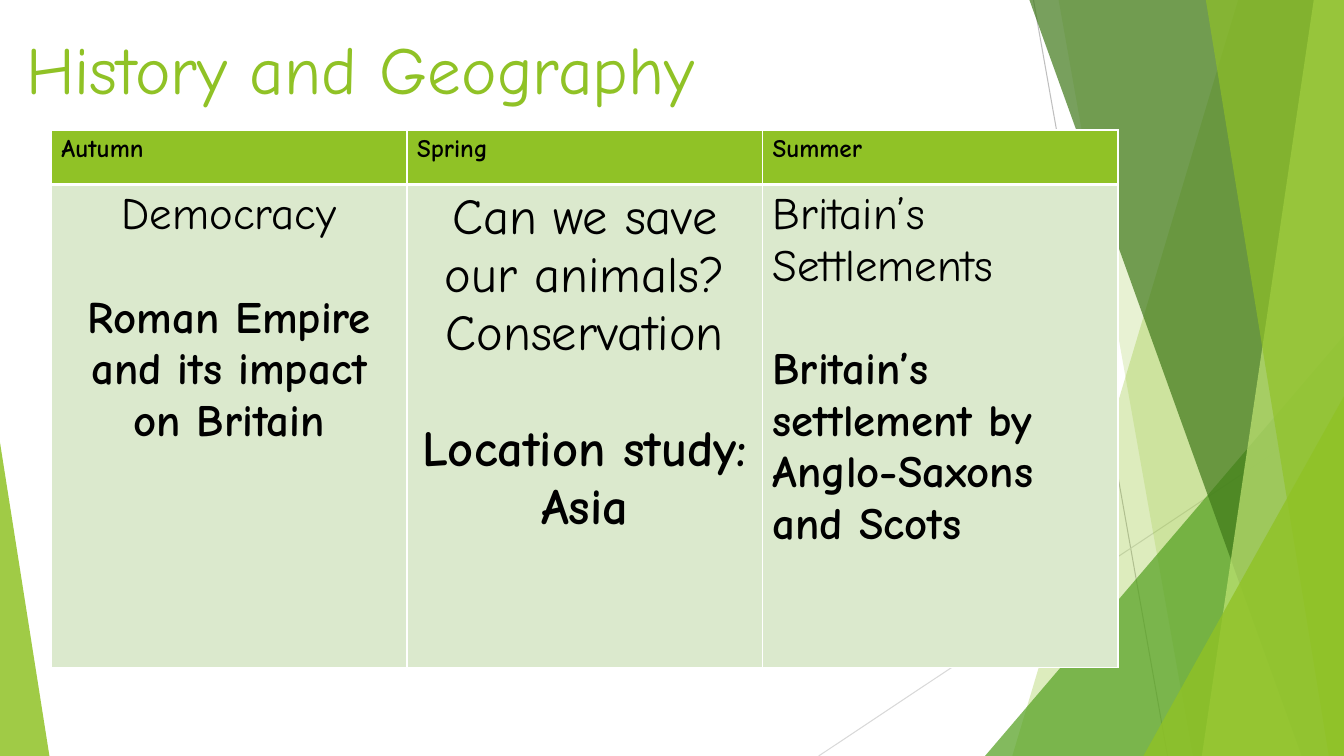
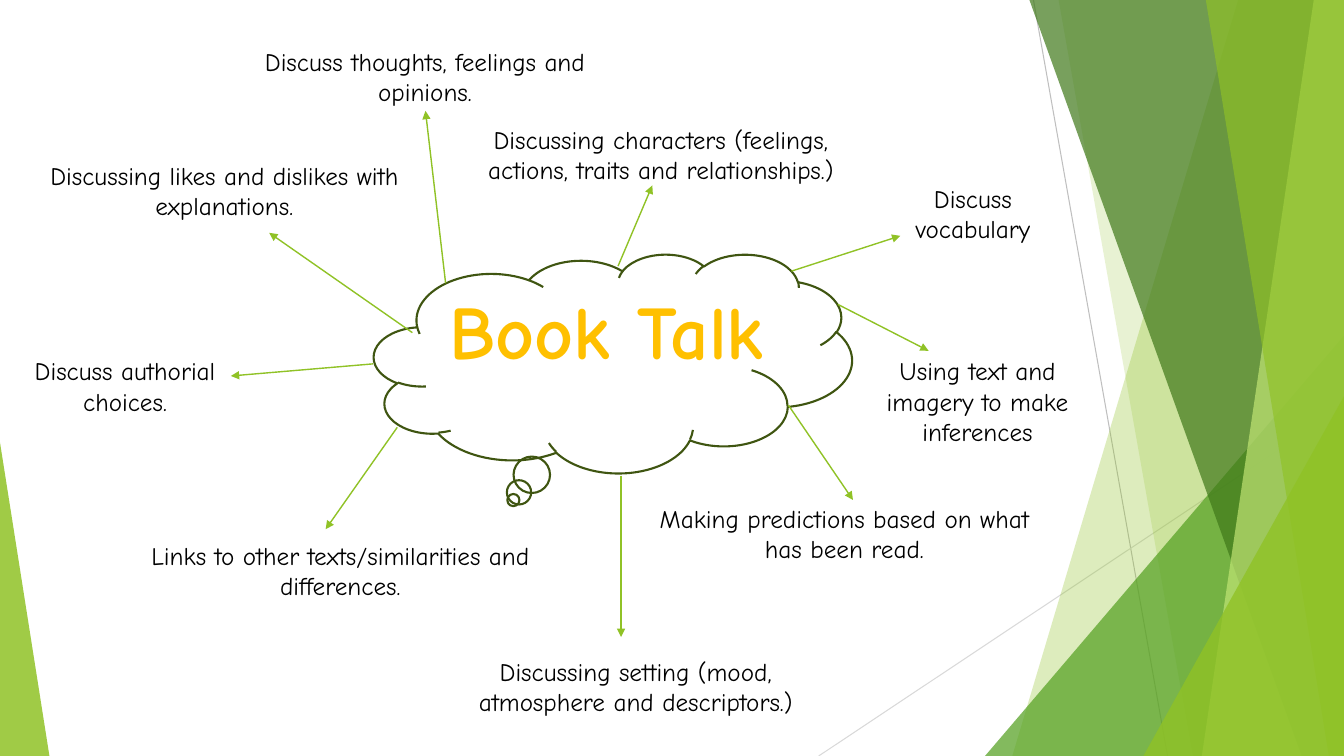
import dataclasses

import lxml.etree
import pptx
import pptx.dml.color
import pptx.enum.shapes
import pptx.enum.text
import pptx.oxml.ns
import pptx.util

Inches = pptx.util.Inches
Pt = pptx.util.Pt
SHAPES = pptx.enum.shapes.MSO_SHAPE
CENTER = pptx.enum.text.PP_ALIGN.CENTER
LEFT = pptx.enum.text.PP_ALIGN.LEFT

WIDTH, HEIGHT = 13.33, 7.5
FONT = "Comic Neue"
COLORS = {
    "lime": "90C226",
    "green": "54A021",
    "forest": "3F7819",
    "pale": "C0E474",
    "cell": "DBE9CD",
    "outline": "3F5511",
    "gold": "FFC000",
    "gray": "BFBFBF",
    "silver": "D9D9D9",
    "black": "000000",
    "white": "FFFFFF",
}


@dataclasses.dataclass(frozen=True)
class Band:
    """Band from top to bottom edge, reaching the right side of the slide."""
    top_left: float
    bottom_left: float
    color: str
    opacity: int


@dataclasses.dataclass(frozen=True)
class Corner:
    """Right-angled triangle standing on the bottom edge."""
    left: float
    top: float
    width: float
    apex: int
    color: str
    opacity: int


@dataclasses.dataclass(frozen=True)
class Line:
    start: tuple[float, float]
    end: tuple[float, float]
    color: str = "lime"
    width: float = 1
    arrow: bool = True


@dataclasses.dataclass(frozen=True)
class Paragraph:
    text: str
    size: int = 18
    bold: bool = False
    color: str = "black"
    align: int = LEFT
    space_before: float = 0


@dataclasses.dataclass(frozen=True)
class Idea:
    text: str
    box: tuple[float, float, float, float]
    arrow: Line


BACKDROP_LINES = [
    Line((10.25, 0), (11.58, HEIGHT), "gray", 0.75, False),
    Line((WIDTH, 4.03), (8.12, HEIGHT), "silver", 0.75, False),
]
BACKDROP = [
    Band(12.28, 10.04, "lime", 30),
    Band(10.5, 11.83, "lime", 20),
    Corner(9.77, 3.33, 3.56, 1, "green", 72),
    Band(10.21, 12.91, "forest", 70),
    Band(13.03, 11.92, "pale", 70),
    Band(11.96, 13.18, "lime", 65),
    Corner(11.34, 3.93, 1.99, 1, "lime", 80),
    Corner(0, 4.39, 0.49, 0, "lime", 85),
]

# Each term: heading and the paragraphs below it
TERMS = {
    "Autumn": [
        Paragraph("Democracy", 32, align=CENTER),
        Paragraph("Roman Empire and its impact on Britain", 32, True,
                  align=CENTER, space_before=37),
    ],
    "Spring": [
        Paragraph("Can we save our animals?", 36, align=CENTER),
        Paragraph("Conservation", 36, align=CENTER),
        Paragraph("Location study: Asia", 36, True,
                  align=CENTER, space_before=41.5),
    ],
    "Summer": [
        Paragraph("Britain’s Settlements", 32),
        Paragraph("Britain’s settlement by Anglo-Saxons and Scots", 32, True,
                  space_before=37),
    ],
}

IDEAS = [
    Idea("Discussing likes and dislikes with explanations.",
         (0.18, 1.54, 4.09, 0.71), Line((4.09, 3.3), (2.67, 2.31))),
    Idea("Links to other texts/similarities and differences.",
         (1.33, 5.31, 4.09, 0.71), Line((3.94, 4.24), (3.23, 5.25))),
    Idea("Discussing characters (feelings, actions, traits and relationships.)",
         (4.51, 1.18, 4.09, 0.71), Line((6.13, 2.64), (6.47, 1.84))),
    Idea("Making predictions based on what has been read.",
         (6.33, 4.94, 4.09, 0.71), Line((7.82, 4.02), (8.46, 4.96))),
    Idea("Discussing setting (mood, atmosphere and descriptors.)",
         (4.26, 6.46, 4.09, 0.71), Line((6.16, 4.72), (6.16, 6.32))),
    Idea("Using text and imagery to make inferences",
         (8.6, 3.48, 2.19, 1.01), Line((8.31, 3.02), (9.21, 3.48))),
    Idea("Discuss authorial choices.",
         (0.18, 3.48, 2.12, 1.01), Line((3.7, 3.61), (2.29, 3.73))),
    Idea("Discuss vocabulary",
         (8.6, 1.77, 2.1, 0.71), Line((7.85, 2.69), (8.93, 2.34))),
    Idea("Discuss thoughts, feelings and opinions.",
         (2.33, 0.41, 3.77, 0.71), Line((4.42, 2.81), (4.22, 1.1))),
]


def rgb(name: str) -> pptx.dml.color.RGBColor:
    return pptx.dml.color.RGBColor.from_string(COLORS[name])


def add_element(parent, tag: str, **attributes: str):
    return lxml.etree.SubElement(parent, pptx.oxml.ns.qn(tag), attributes)


def paint(shape, color: str, opacity: int) -> None:
    """Fill a shape with a see-through colour and no outline."""
    shape.shadow.inherit = False
    shape.fill.solid()
    shape.fill.fore_color.rgb = rgb(color)
    shape.line.fill.background()
    color_element = shape.fill._xPr.find(".//" + pptx.oxml.ns.qn("a:srgbClr"))
    add_element(color_element, "a:alpha", val=str(opacity * 1000))


def write(text_frame, paragraphs: list[Paragraph]) -> None:
    text_frame.word_wrap = True
    for index, item in enumerate(paragraphs):
        paragraph = text_frame.add_paragraph() if index else text_frame.paragraphs[0]
        paragraph.alignment = item.align
        paragraph.space_before = Pt(item.space_before)
        run = paragraph.add_run()
        run.text = item.text
        formats = {"name": FONT, "size": Pt(item.size), "bold": item.bold}
        for name, value in formats.items():
            setattr(run.font, name, value)
        run.font.color.rgb = rgb(item.color)


def add_text(slide, box: tuple[float, float, float, float], item: Paragraph) -> None:
    textbox = slide.shapes.add_textbox(*map(Inches, box))
    write(textbox.text_frame, [item])


def add_line(slide, line: Line) -> None:
    connector = slide.shapes.add_connector(
        pptx.enum.shapes.MSO_CONNECTOR.STRAIGHT,
        *map(Inches, (*line.start, *line.end)))
    connector.line.color.rgb = rgb(line.color)
    connector.line.width = Pt(line.width)
    if line.arrow:
        add_element(connector.line._get_or_add_ln(), "a:tailEnd", type="triangle")
    add_element(connector._element.spPr, "a:effectLst")


def add_band(slide, band: Band) -> None:
    builder = slide.shapes.build_freeform(Inches(band.top_left), 0)
    corners = [(WIDTH, 0), (WIDTH, HEIGHT), (band.bottom_left, HEIGHT)]
    builder.add_line_segments([(Inches(x), Inches(y)) for x, y in corners])
    paint(builder.convert_to_shape(), band.color, band.opacity)


def add_corner(slide, corner: Corner) -> None:
    box = (corner.left, corner.top, corner.width, HEIGHT - corner.top)
    shape = slide.shapes.add_shape(SHAPES.ISOSCELES_TRIANGLE, *map(Inches, box))
    shape.adjustments[0] = corner.apex
    paint(shape, corner.color, corner.opacity)


def add_slide(presentation):
    """Add a blank slide with the shared green backdrop."""
    slide = presentation.slides.add_slide(presentation.slide_layouts[6])
    for line in BACKDROP_LINES:
        add_line(slide, line)
    for part in BACKDROP:
        if isinstance(part, Band):
            add_band(slide, part)
        else:
            add_corner(slide, part)
    return slide


def fill_cell(cell, color: str, paragraphs: list[Paragraph],
              top: int = 1, bottom: int = 1) -> None:
    properties = cell._tc.get_or_add_tcPr()
    for side, width in {"L": 1, "R": 1, "T": top, "B": bottom}.items():
        border = add_element(properties, f"a:ln{side}", w=str(Pt(width)))
        fill = add_element(border, "a:solidFill")
        add_element(fill, "a:srgbClr", val=COLORS["white"])
    cell.fill.solid()
    cell.fill.fore_color.rgb = rgb(color)
    write(cell.text_frame, paragraphs)


def build_subjects(presentation) -> None:
    slide = add_slide(presentation)
    add_text(slide, (0.16, 0.22, 9.4, 1.44),
             Paragraph("History and Geography", 48, color="lime"))

    # Terms table
    box = (0.51, 1.29, 10.58, 5.33)
    table = slide.shapes.add_table(2, len(TERMS), *map(Inches, box)).table
    table.horz_banding = False
    for row, height in zip(table.rows, (0.54, 4.79)):
        row.height = Inches(height)
    for column, (term, topics) in enumerate(TERMS.items()):
        fill_cell(table.cell(0, column), "lime",
                  [Paragraph(term, bold=True)], bottom=3)
        fill_cell(table.cell(1, column), "cell", topics, top=3)


def build_book_talk(presentation) -> None:
    slide = add_slide(presentation)

    # Thought cloud
    cloud = slide.shapes.add_shape(
        SHAPES.CLOUD_CALLOUT, *map(Inches, (3.71, 2.52, 4.74, 2.17)))
    cloud.shadow.inherit = False
    cloud.fill.background()
    cloud.line.color.rgb = rgb("outline")
    cloud.line.width = Pt(1.5)
    add_text(slide, (4.34, 2.77, 3.35, 1.92),
             Paragraph("Book Talk", 54, True, "gold", CENTER))

    # Ideas around the cloud
    for idea in IDEAS:
        add_line(slide, idea.arrow)
        add_text(slide, idea.box, Paragraph(idea.text, align=CENTER))


def main() -> None:
    presentation = pptx.Presentation()
    presentation.slide_width = Inches(WIDTH)
    presentation.slide_height = Inches(HEIGHT)
    build_subjects(presentation)
    build_book_talk(presentation)
    presentation.save("out.pptx")


if __name__ == "__main__":
    main()
